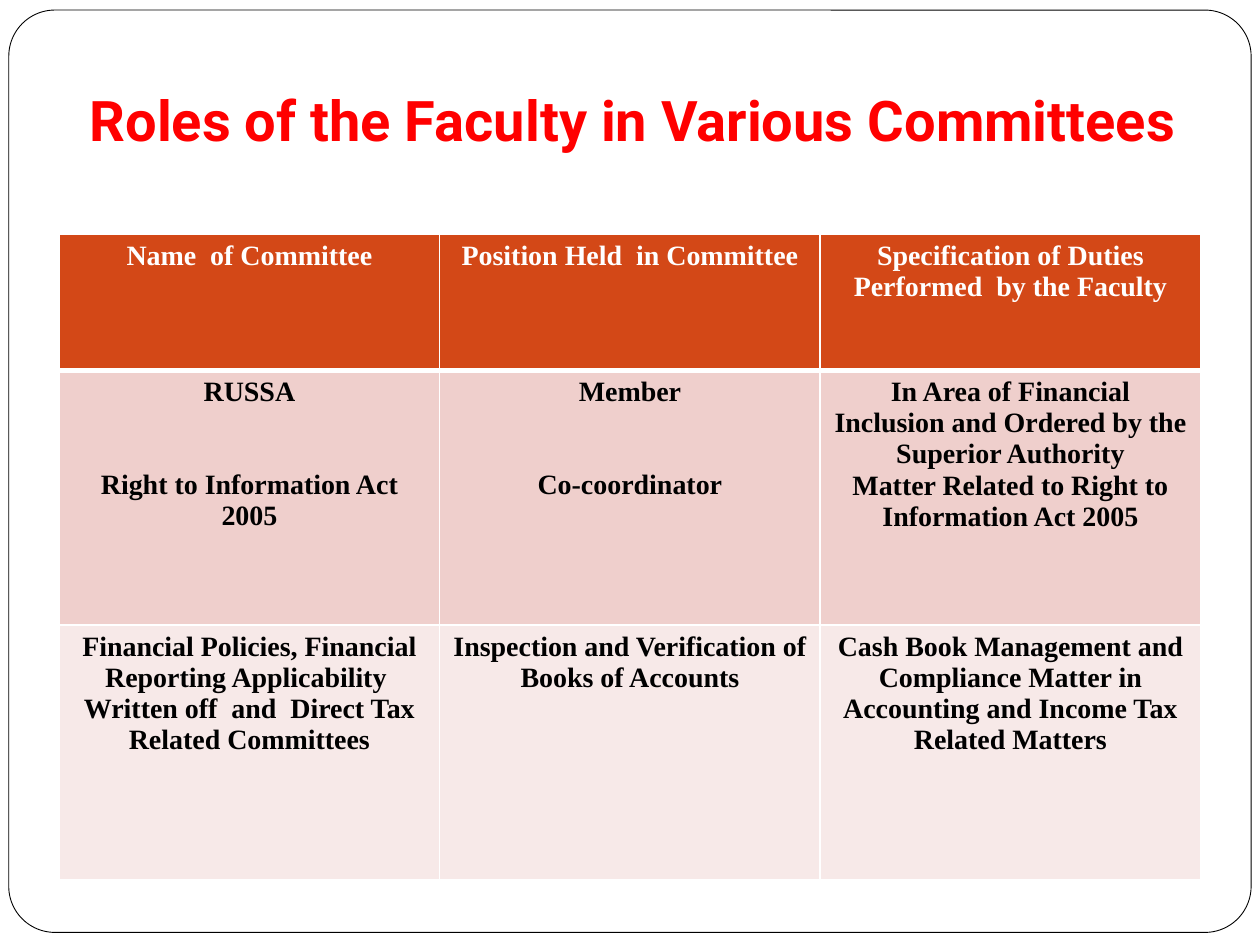
from lxml import etree
from pptx import Presentation
from pptx.dml.color import RGBColor
from pptx.enum import shapes, text
from pptx.oxml import ns
from pptx.util import Inches, Pt

TITLE = "Roles of the Faculty in Various Committees"
# Each cell is a list of paragraphs.
ROWS = [
    [["Name  of Committee"],
     ["Position Held  in Committee"],
     ["Specification of Duties Performed  by the Faculty"]],
    [["RUSSA", "Right to Information Act 2005"],
     ["Member", "Co-coordinator"],
     ["In Area of Financial Inclusion and Ordered by the Superior Authority",
      "Matter Related to Right to Information Act 2005"]],
    [["Financial Policies, Financial Reporting Applicability  Written off  and  "
      "Direct Tax Related Committees"],
     ["Inspection and Verification of Books of Accounts"],
     ["Cash Book Management and Compliance Matter in Accounting and "
      "Income Tax Related Matters"]],
]
ROW_HEIGHTS = [1.08, 2.02, 2.02]
COLUMN_WIDTH = 3.02
ENTRY_GAP = Pt(35.4)  # two lines between the committees of one cell

WHITE = RGBColor(0xFF, 0xFF, 0xFF)
BLACK = RGBColor(0, 0, 0)
RED = RGBColor(0xFF, 0, 0)
ROW_FILLS = [RGBColor(0xD3, 0x48, 0x17), RGBColor(0xEF, 0xCF, 0xCC),
             RGBColor(0xF7, 0xE9, 0xE8)]


def style_font(font, name, size, color):
    font.name, font.size, font.bold = name, Pt(size), True
    font.color.rgb = color


def add_borders(cell, top, bottom):
    """Draw white cell borders; top and bottom are widths in points."""
    properties = cell._tc.get_or_add_tcPr()
    widths = {"a:lnL": 1, "a:lnR": 1, "a:lnT": top, "a:lnB": bottom}
    for index, (tag, width) in enumerate(widths.items()):
        line = etree.Element(ns.qn(tag), w=str(Pt(width)))
        fill = etree.SubElement(line, ns.qn("a:solidFill"))
        etree.SubElement(fill, ns.qn("a:srgbClr"), val=str(WHITE))
        properties.insert(index, line)


def add_title(page):
    title = page.shapes.title
    title.left, title.top = Inches(0.55), Inches(0.6)
    title.width, title.height = Inches(8.95), Inches(0.71)
    frame = title.text_frame
    frame.text = TITLE
    frame.auto_size = text.MSO_AUTO_SIZE.NONE
    frame.vertical_anchor = text.MSO_ANCHOR.BOTTOM
    frame.margin_bottom = Inches(0.1)
    para = frame.paragraphs[0]
    para.alignment = text.PP_ALIGN.CENTER
    style_font(para.font, "Roboto", 32, RED)


def add_page_border(page):
    border = page.shapes.add_shape(
        shapes.MSO_SHAPE.ROUNDED_RECTANGLE,
        Inches(0.07), Inches(0.08), Inches(9.86), Inches(7.32))
    border.adjustments[0] = 0.05
    border.shadow.inherit = False
    border.fill.solid()
    border.fill.fore_color.rgb = WHITE
    border.line.color.rgb = BLACK
    border.line.width = Pt(0.5)
    page.shapes.title._element.addprevious(border._element)  # behind the title


def fill_cell(cell, entries, row):
    cell.fill.solid()
    cell.fill.fore_color.rgb = ROW_FILLS[row]
    add_borders(cell, top=3 if row == 1 else 1, bottom=3 if row == 0 else 1)
    cell.text = "\n".join(entries)
    paras = cell.text_frame.paragraphs
    for para in paras:
        para.alignment = text.PP_ALIGN.CENTER
        style_font(para.font, "Times New Roman", 16, BLACK if row else WHITE)
    if len(paras) > 1 and len(entries[0]) < 20:  # short entries leave lines free
        paras[1].space_before = ENTRY_GAP


def add_committee_table(page):
    columns = len(ROWS[0])
    table = page.shapes.add_table(
        len(ROWS), columns, Inches(0.47), Inches(1.86),
        Inches(COLUMN_WIDTH * columns), Inches(sum(ROW_HEIGHTS))).table
    for column in table.columns:
        column.width = Inches(COLUMN_WIDTH)
    for row, (height, cells) in enumerate(zip(ROW_HEIGHTS, ROWS)):
        table.rows[row].height = Inches(height)
        for column, entries in enumerate(cells):
            fill_cell(table.cell(row, column), entries, row)


def main():
    deck = Presentation()
    deck.slide_width, deck.slide_height = Inches(10), Inches(7.5)
    page = deck.slides.add_slide(deck.slide_layouts.get_by_name("Title Only"))
    add_title(page)
    add_page_border(page)
    add_committee_table(page)
    deck.save("out.pptx")


if __name__ == "__main__":
    main()
